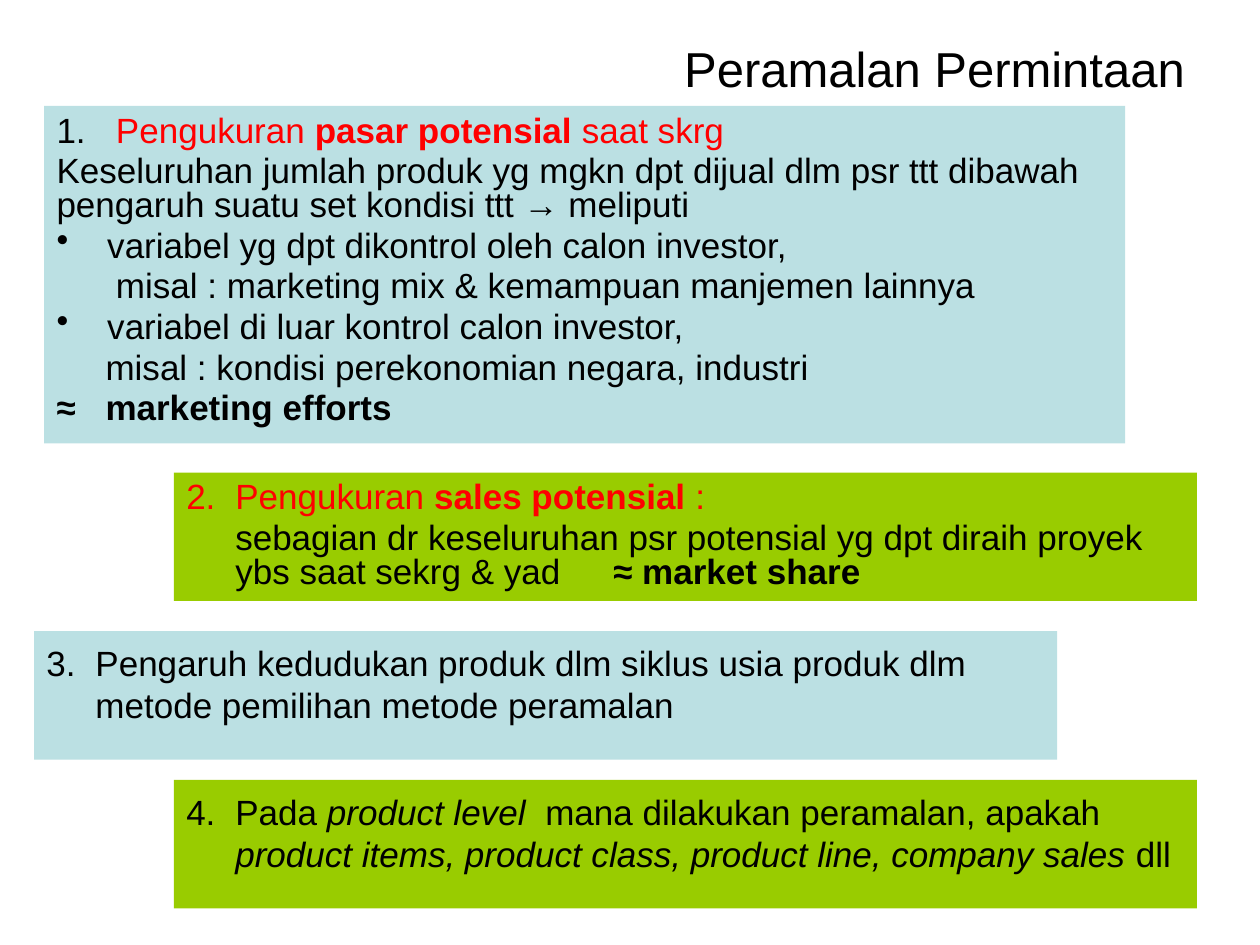
"""Build the demand forecasting slide."""
from dataclasses import dataclass
from typing import Optional

from lxml import etree
from pptx import Presentation
from pptx.dml.color import RGBColor
from pptx.enum.shapes import MSO_SHAPE
from pptx.enum.text import MSO_ANCHOR, PP_ALIGN
from pptx.oxml.ns import qn
from pptx.util import Pt

RECT = MSO_SHAPE.RECTANGLE
TOP, MIDDLE = MSO_ANCHOR.TOP, MSO_ANCHOR.MIDDLE
LEFT, RIGHT = PP_ALIGN.LEFT, PP_ALIGN.RIGHT
BLACK, RED, BLUE, GREEN = "000000", "FF0000", "BBE0E3", "99CC00"


@dataclass(frozen=True)
class Run:
    text: str
    color: str = BLACK
    bold: bool = False
    italic: bool = False


@dataclass(frozen=True)
class Para:
    runs: tuple[Run, ...]
    margin: float = 0
    hanging: bool = False
    bullet: bool = False
    tab: Optional[float] = None


@dataclass(frozen=True)
class Box:
    left: float
    top: float
    width: float
    height: float
    paras: tuple[Para, ...]
    fill: Optional[str] = None
    spacing: float = 1.0
    size: float = 20
    inset: float = 6
    anchor: MSO_ANCHOR = TOP
    align: PP_ALIGN = LEFT


BOXES = (
    Box(156.24, 23.76, 527.76, 30.24, (Para((Run("Peramalan Permintaan"),)),),
        size=28, inset=3.6, anchor=MIDDLE, align=RIGHT),
    Box(25.2, 60.48, 617.76, 192.96, (
        Para((Run("1.\t"), Run("Pengukuran ", RED), Run("pasar potensial", RED, bold=True),
              Run(" saat skrg", RED)), 34, hanging=True),
        Para((Run("Keseluruhan jumlah produk yg mgkn dpt dijual dlm psr ttt dibawah "
                  "pengaruh suatu set kondisi ttt → meliputi"),)),
        Para((Run("variabel yg dpt dikontrol oleh calon investor,"),), 29, True, True),
        Para((Run("misal : marketing mix & kemampuan manjemen lainnya"),), 34),
        Para((Run("variabel di luar kontrol calon investor,"),), 29, True, True),
        Para((Run("misal : kondisi perekonomian negara, industri"),), 28),
        Para((Run("≈\tmarketing efforts", bold=True),), 28, hanging=True),
    ), BLUE, 0.8),
    Box(99.36, 270, 584.64, 73.44, (
        Para((Run("2.\tPengukuran ", RED), Run("sales potensial", RED, bold=True),
              Run(" :", RED)), 28, hanging=True),
        Para((Run("sebagian dr keseluruhan psr potensial yg dpt diraih proyek "
                  "ybs saat sekrg & yad\t"), Run("≈ market share", bold=True)), 28, tab=252),
    ), GREEN, 0.8),
    Box(19.44, 360.72, 584.64, 73.44, (
        Para((Run("3.\tPengaruh kedudukan produk dlm siklus usia produk dlm "
                  "metode pemilihan metode peramalan"),), 28, hanging=True),
    ), BLUE),
    Box(99.36, 445.68, 584.64, 73.44, (
        Para((Run("4.\tPada "), Run("product level ", italic=True),
              Run(" mana dilakukan peramalan, apakah "),
              Run("product items, product class, product line, company sales ", italic=True),
              Run("dll")), 28, hanging=True),
    ), GREEN),
)


def rgb(value: str) -> RGBColor:
    """Turn a hex string into a colour."""
    return RGBColor.from_string(value)


def set_attrs(target: object, values: dict) -> None:
    """Set each named value on the target."""
    for name, value in values.items():
        setattr(target, name, value)


def format_para(p, para: Para) -> None:
    """Set the indent, bullet and tab stop of a paragraph."""
    pPr = p._p.get_or_add_pPr()
    pPr.set("marL", str(Pt(para.margin)))
    pPr.set("indent", str(Pt(-para.margin if para.hanging else 0)))
    if para.bullet:
        etree.SubElement(pPr, qn("a:buChar"), char="•")
    else:
        etree.SubElement(pPr, qn("a:buNone"))
    if para.tab is not None:
        tabs = etree.SubElement(pPr, qn("a:tabLst"))
        etree.SubElement(tabs, qn("a:tab"), pos=str(Pt(para.tab)), algn="l")


def add_box(s, box: Box) -> None:
    """Draw one box with its paragraphs."""
    place = [Pt(v) for v in (box.left, box.top, box.width, box.height)]
    if box.fill:
        sp = s.shapes.add_shape(RECT, *place)
        sp.shadow.inherit = False
        sp.fill.solid()
        sp.fill.fore_color.rgb = rgb(box.fill)
        sp.line.fill.background()
    else:
        sp = s.shapes.add_textbox(*place)
    tf = sp.text_frame
    set_attrs(tf, {"word_wrap": True, "vertical_anchor": box.anchor,
                   "margin_left": Pt(7.2), "margin_right": Pt(7.2),
                   "margin_top": Pt(box.inset), "margin_bottom": Pt(3.6)})
    for i, para in enumerate(box.paras):
        p = tf.add_paragraph() if i else tf.paragraphs[0]
        format_para(p, para)
        set_attrs(p, {"alignment": box.align, "line_spacing": box.spacing,
                      "space_before": Pt(4 if i else 0)})
        for run in para.runs:
            r = p.add_run()
            r.text = run.text
            set_attrs(r.font, {"name": "Arial", "size": Pt(box.size),
                               "bold": run.bold, "italic": run.italic})
            r.font.color.rgb = rgb(run.color)


def main() -> None:
    """Build and save the slide."""
    prs = Presentation()
    set_attrs(prs, {"slide_width": Pt(720), "slide_height": Pt(540)})
    s = prs.slides.add_slide(prs.slide_layouts[6])
    for box in BOXES:
        add_box(s, box)
    prs.save("out.pptx")


if __name__ == "__main__":
    main()
